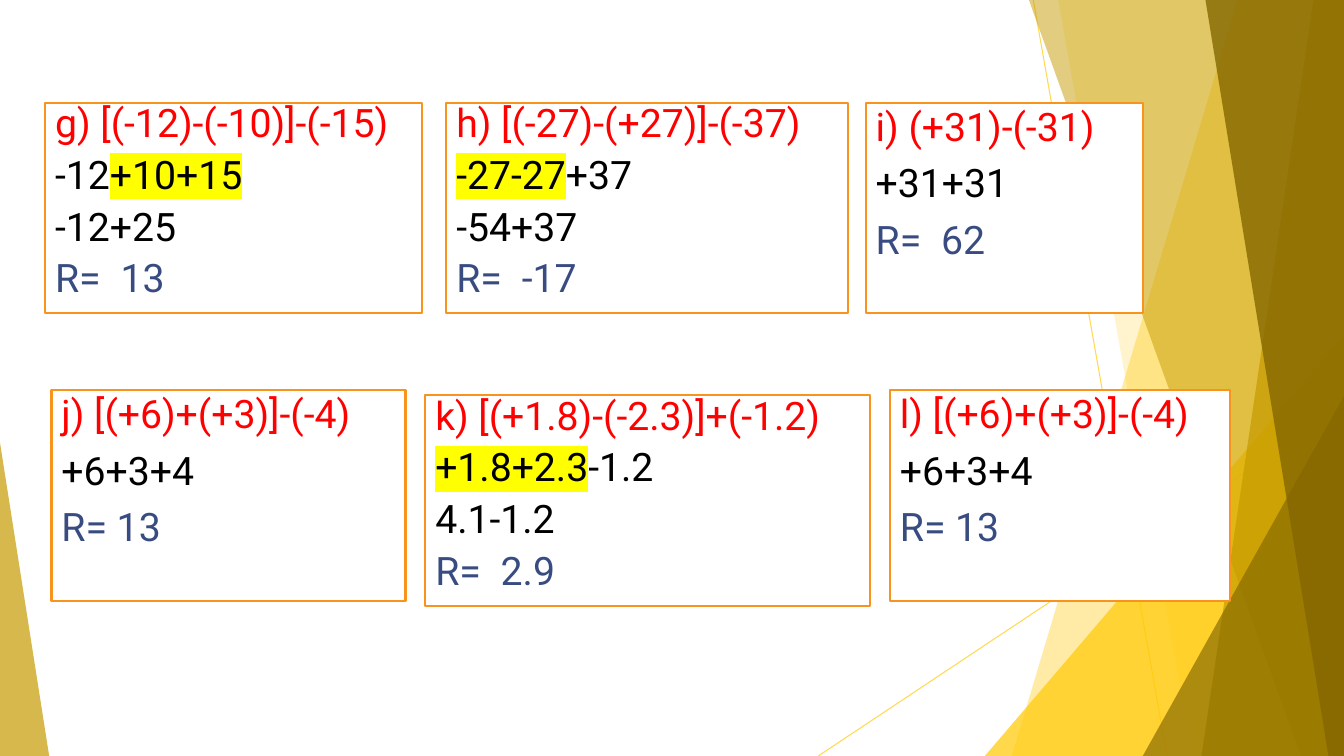
from lxml.etree import SubElement
from pptx import Presentation
from pptx.dml.color import RGBColor
from pptx.enum.shapes import MSO_CONNECTOR as Connector, MSO_SHAPE as Preset
from pptx.enum.text import MSO_ANCHOR as Anchor, PP_ALIGN as Align
from pptx.oxml.ns import qn
from pptx.util import Cm, Pt

WIDTH, HEIGHT = 33.87, 19.05
GOLD, OCHRE, BRONZE = "FFCA08", "C59B00", "846700"
RED, BLACK, BLUE = "FF0000", "000000", "384C81"


def paint(fill, color):
    fill.solid()
    fill.fore_color.rgb = RGBColor.from_string(color)


def set_opacity(shape, percent):
    for color in shape.element.spPr.iter(qn("a:srgbClr")):
        SubElement(color, qn("a:alpha"), val=str(percent * 1000))


deck = Presentation()
deck.slide_width, deck.slide_height = Cm(WIDTH), Cm(HEIGHT)
page = deck.slides.add_slide(deck.slide_layouts[6])
shapes = page.shapes

# Thin gold lines behind the facets
for ends in [(26.04, 0, 29.41, HEIGHT), (WIDTH, 10.24, 20.62, HEIGHT)]:
    ray = shapes.add_connector(Connector.STRAIGHT, *map(Cm, ends))
    paint(ray.line.fill, GOLD)
    ray.line.width = Pt(0.75)
    set_opacity(ray, 70)
    SubElement(ray.element.spPr, qn("a:effectLst"))

# Bands: (top x, bottom x), reaching the right edge
# Triangles: (left, top, width, peak), standing on the bottom edge
facets = [
    (GOLD, 36, (31.19, 25.5)),
    (GOLD, 20, (26.67, 30.05)),
    (GOLD, 72, (24.82, 8.46, 9.05, 1)),
    (OCHRE, 50, (25.93, 32.79)),
    (OCHRE, 70, (33.1, 30.28)),
    (BRONZE, 80, (30.38, 33.48)),
    (BRONZE, 66, (28.8, 9.98, 5.07, 1)),
    (OCHRE, 70, (0, 11.15, 1.24, 0)),
]
for color, opacity, outline in facets:
    if len(outline) == 2:
        top_x, bottom_x = outline
        builder = shapes.build_freeform(Cm(top_x), 0)
        corners = [(WIDTH, 0), (WIDTH, HEIGHT), (bottom_x, HEIGHT)]
        builder.add_line_segments([(Cm(x), Cm(y)) for x, y in corners])
        facet = builder.convert_to_shape()
    else:
        left, top, width, peak = outline
        facet = shapes.add_shape(Preset.ISOSCELES_TRIANGLE, Cm(left), Cm(top),
                                 Cm(width), Cm(HEIGHT - top))
        facet.adjustments[0] = peak
    paint(facet.fill, color)
    set_opacity(facet, opacity)
    facet.line.fill.background()
    facet.shadow.inherit = False

# Left, top, width, lines; text between bars is highlighted
exercises = [
    (1.14, 2.59, 9.5, ["g) [(-12)-(-10)]-(-15)", "-12|+10+15|", "-12+25", "R=\t13"]),
    (11.25, 2.59, 10.13, ["h) [(-27)-(+27)]-(-37)", "|-27-27|+37", "-54+37", "R=\t-17"]),
    (21.82, 2.59, 6.99, ["i) (+31)-(-31)", "+31+31", "R=\t62"]),
    (1.3, 9.83, 8.92, ["j) [(+6)+(+3)]-(-4)", "+6+3+4", "R= 13"]),
    (10.72, 9.96, 11.2, ["k) [(+1.8)-(-2.3)]+(-1.2)", "|+1.8+2.3|-1.2", "4.1-1.2", "R=\t2.9"]),
    (22.43, 9.83, 8.56, ["l) [(+6)+(+3)]-(-4)", "+6+3+4", "R= 13"]),
]
frame_format = {"word_wrap": True, "vertical_anchor": Anchor.TOP}
span_format = {"size": Pt(28), "name": "Roboto"}

for left, top, width, lines in exercises:
    box = shapes.add_shape(Preset.RECTANGLE, Cm(left), Cm(top), Cm(width), Cm(5.31))
    box.shadow.inherit = False
    paint(box.fill, "FFFFFF")
    paint(box.line.fill, "F8931D")
    box.line.width = Pt(1.5)
    frame = box.text_frame
    for name, value in frame_format.items():
        setattr(frame, name, value)

    para_format = {"alignment": Align.LEFT, "space_before": Pt(10),
                   "line_spacing": 0.8 if len(lines) == 4 else 0.9}
    colors = [RED] + [BLACK] * (len(lines) - 2) + [BLUE]
    for number, (line, color) in enumerate(zip(lines, colors)):
        para = frame.add_paragraph() if number else frame.paragraphs[0]
        for name, value in para_format.items():
            setattr(para, name, value)
        if "\t" in line:
            tabs = SubElement(para._p.get_or_add_pPr(), qn("a:tabLst"))
            SubElement(tabs, qn("a:tab"), pos=str(Cm(1.65)), algn="l")
        for part, text in enumerate(line.split("|")):
            if not text:
                continue
            span = para.add_run()
            span.text = text
            paint(span.font.fill, color)
            if part % 2:
                marker = SubElement(span._r.get_or_add_rPr(), qn("a:highlight"))
                SubElement(marker, qn("a:srgbClr"), val="FFFF00")
            for name, value in span_format.items():
                setattr(span.font, name, value)

deck.save("out.pptx")
